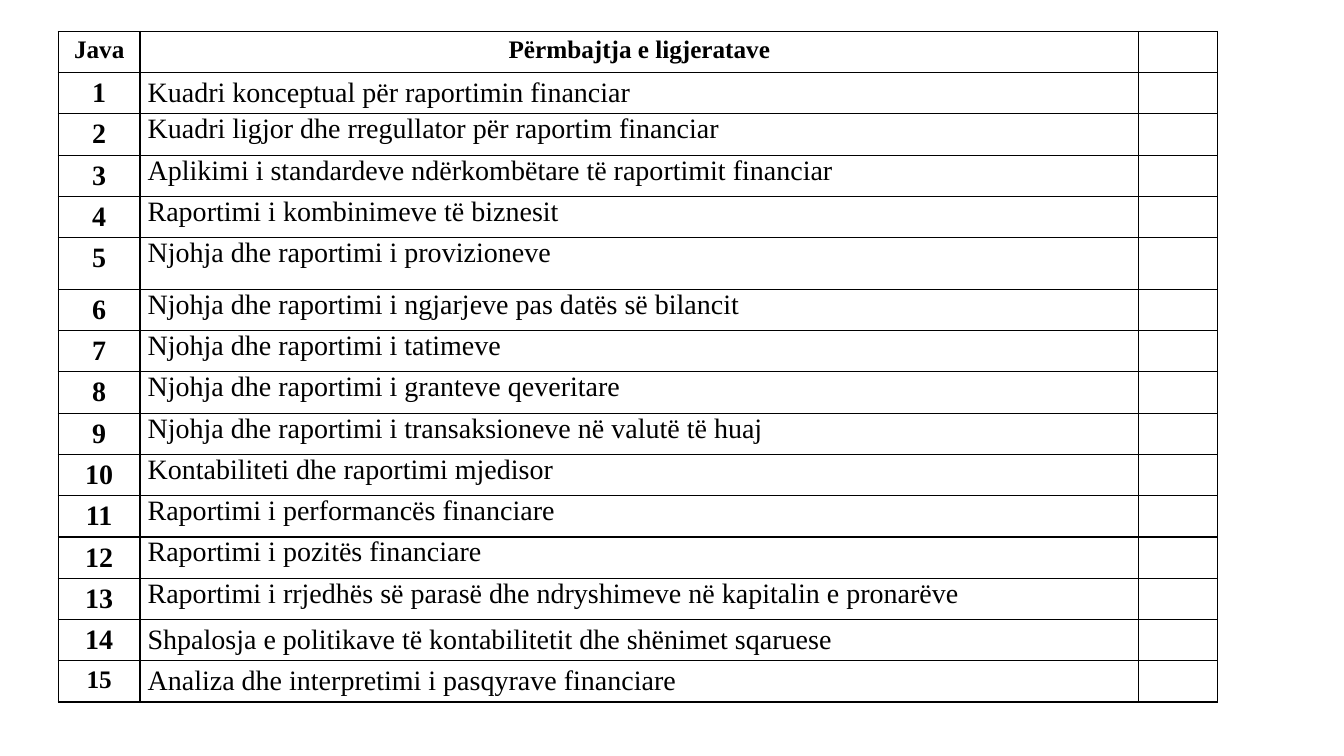
"""Build a slide with the weekly lecture plan as a bordered table."""
from lxml import etree
from pptx import Presentation
from pptx import util as u
from pptx.dml.color import RGBColor
from pptx.enum import text
from pptx.oxml.ns import qn

BLACK = RGBColor(0x00, 0x00, 0x00)
FONT = "Times New Roman"
LECTURES = [
    "Kuadri konceptual për raportimin financiar",
    "Kuadri ligjor dhe rregullator për raportim financiar",
    "Aplikimi i standardeve ndërkombëtare të raportimit financiar",
    "Raportimi i kombinimeve të biznesit",
    "Njohja dhe raportimi i provizioneve",
    "Njohja dhe raportimi i ngjarjeve pas datës së bilancit",
    "Njohja dhe raportimi i tatimeve",
    "Njohja dhe raportimi i granteve qeveritare",
    "Njohja dhe raportimi i transaksioneve në valutë të huaj",
    "Kontabiliteti dhe raportimi mjedisor",
    "Raportimi i performancës financiare",
    "Raportimi i pozitës financiare",
    "Raportimi i rrjedhës së parasë dhe ndryshimeve në kapitalin e pronarëve",
    "Shpalosja e politikave të kontabilitetit dhe shënimet sqaruese",
    "Analiza dhe interpretimi i pasqyrave financiare",
]
TALL_WEEK = 5
MIDDLE_WEEKS = (1, 14, 15)
SMALL_WEEKS = (0, 15)


def add_borders(cell):
    tcPr = cell._tc.get_or_add_tcPr()
    for i, side in enumerate(("a:lnL", "a:lnR", "a:lnT", "a:lnB")):
        ln = etree.Element(qn(side), w=str(u.Pt(1)))
        fill = etree.SubElement(ln, qn("a:solidFill"))
        etree.SubElement(fill, qn("a:srgbClr"), val=str(BLACK))
        tcPr.insert(i, ln)


def write(cell, words, size, bold, align):
    p = cell.text_frame.paragraphs[0]
    p.alignment = align
    r = p.add_run()
    r.text = words
    r.font.name = FONT
    r.font.size = u.Pt(size)
    r.font.bold = bold
    r.font.color.rgb = BLACK


prs = Presentation()
prs.slide_width, prs.slide_height = u.Cm(33.87), u.Cm(19.05)
s = prs.slides.add_slide(prs.slide_layouts[6])

rows = [("Java", "Përmbajtja e ligjeratave")]
rows += [(str(week), title) for week, title in enumerate(LECTURES, 1)]

table = s.shapes.add_table(len(rows), 3, u.Cm(1.47), u.Cm(0.79), u.Cm(29.21), u.Cm(16.9)).table
table.first_row = False
table.horz_banding = False
for col, width in zip(table.columns, (2.06, 25.17, 1.98)):
    col.width = u.Cm(width)

for week, (number, title) in enumerate(rows):
    table.rows[week].height = u.Cm(1.3 if week == TALL_WEEK else 1.04)
    for cell in table.rows[week].cells:
        cell.fill.background()
        add_borders(cell)

    number_cell, title_cell = table.cell(week, 0), table.cell(week, 1)
    write(number_cell, number, 18 if week in SMALL_WEEKS else 20, True, text.PP_ALIGN.CENTER)
    if week == 0:
        write(title_cell, title, 18, True, text.PP_ALIGN.CENTER)
        continue
    align = text.PP_ALIGN.LEFT if week == TALL_WEEK else text.PP_ALIGN.JUSTIFY
    write(title_cell, title, 20, False, align)
    title_cell.margin_left = title_cell.margin_right = u.Cm(0.19)
    title_cell.margin_top = title_cell.margin_bottom = 0
    if week in MIDDLE_WEEKS:
        title_cell.vertical_anchor = text.MSO_ANCHOR.MIDDLE

prs.save("out.pptx")
